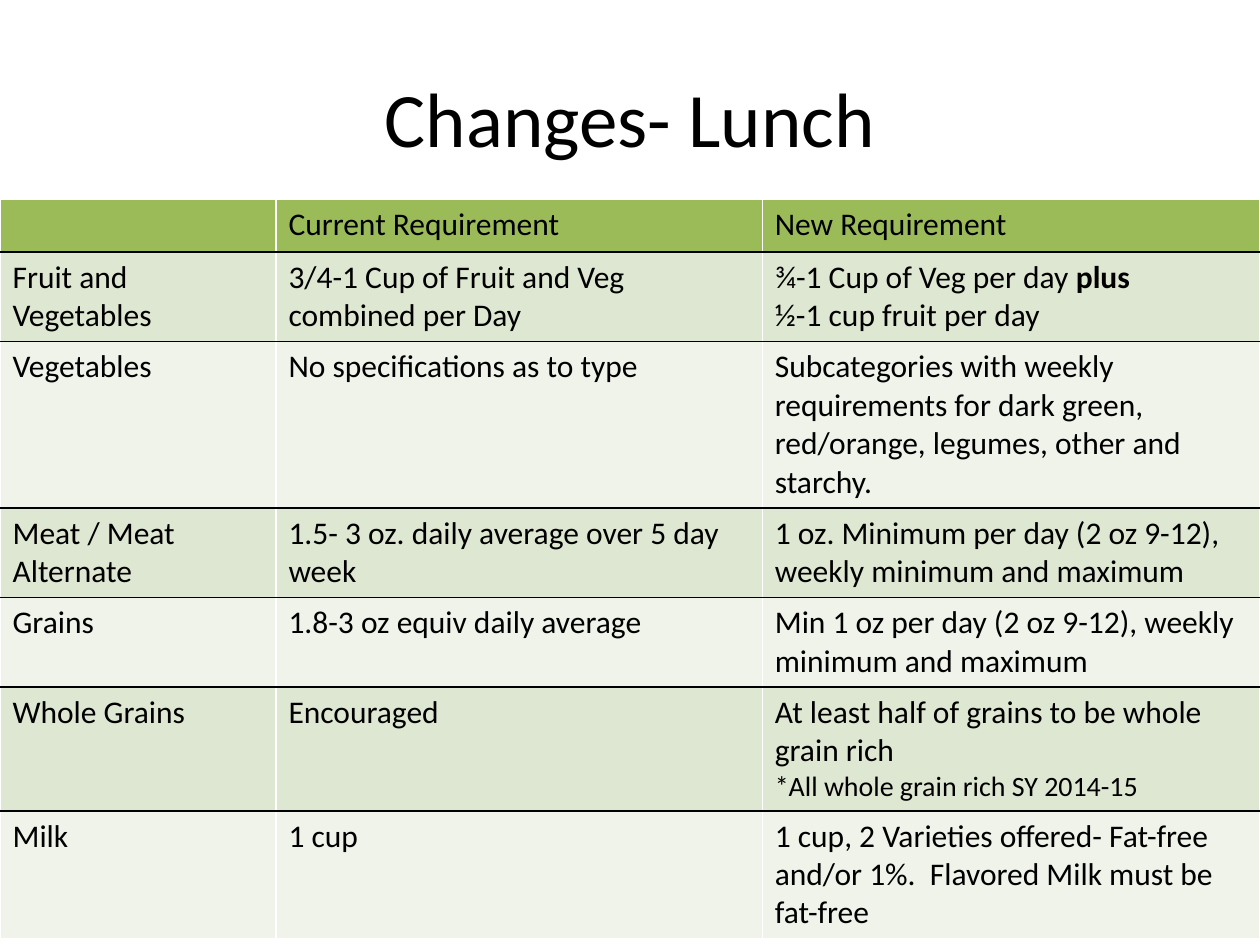
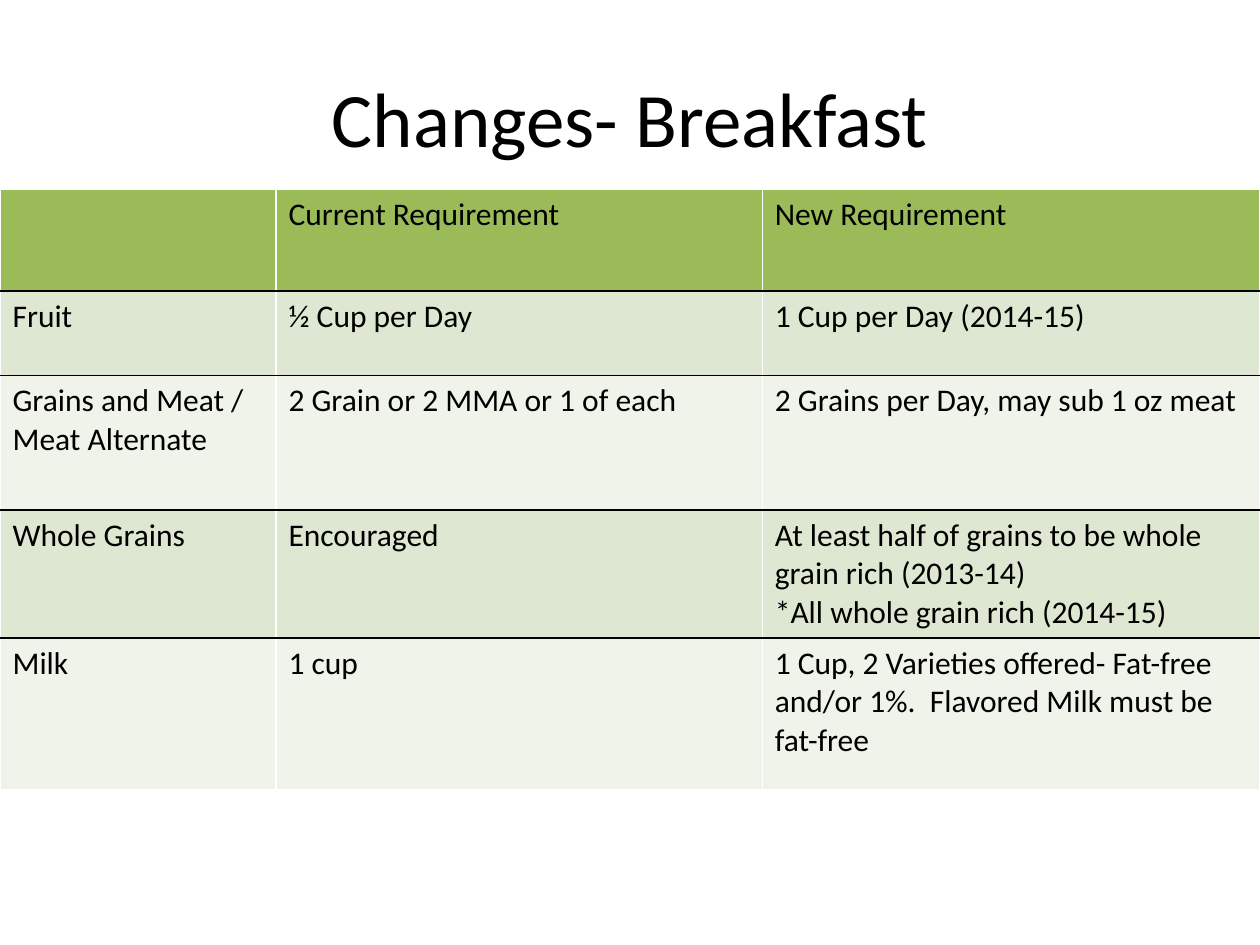
from lxml.etree import SubElement as Sub
from pptx import Presentation
from pptx.dml.color import RGBColor as RGB
from pptx.enum.text import MSO_ANCHOR as Anchor, PP_ALIGN as Align
from pptx.oxml.ns import qn
from pptx.util import Inches, Pt

BLACK = RGB(0x00, 0x00, 0x00)
WHITE = RGB(0xFF, 0xFF, 0xFF)
GREEN = RGB(0x9B, 0xBB, 0x59)
BANDS = (RGB(0xEF, 0xF3, 0xEA), RGB(0xDE, 0xE7, 0xD1))

FACE = "Calibri"
TITLE = (0.5, 0.3, 9, 1.25)
COLS = (2.19, 3.86, 3.95)
HEAD = ("", "Current Requirement", "New Requirement")
BOLD = {"bold": True}
SMALL = {"size": Pt(16)}

LUNCH = (
    HEAD,
    ("Fruit and Vegetables", "3/4-1 Cup of Fruit and Veg combined per Day",
     ([("¾-1 Cup of Veg per day ", {}), ("plus", BOLD)],
      [("½-1 cup fruit per day", {})])),
    ("Vegetables", "No specifications as to type",
     "Subcategories with weekly requirements for dark green, "
     "red/orange, legumes, other and starchy."),
    ("Meat / Meat Alternate", "1.5- 3 oz. daily average over 5 day week",
     "1 oz. Minimum per day (2 oz 9-12), weekly minimum and maximum"),
    ("Grains", "1.8-3 oz equiv daily average",
     "Min 1 oz per day (2 oz 9-12), weekly minimum and maximum"),
    ("Whole Grains", "Encouraged",
     ([("At least half of grains to be whole grain rich", {})],
      [("*All whole grain rich SY 2014-15", SMALL)])),
    ("Milk", "1 cup",
     "1 cup, 2 Varieties offered- Fat-free and/or 1%.  "
     "Flavored Milk must be fat-free"),
)

BREAKFAST = (
    HEAD,
    ("Fruit", "½ Cup per Day", "1 Cup per Day (2014-15)"),
    ("Grains and Meat / Meat Alternate", "2 Grain or 2 MMA or 1 of each",
     "2 Grains per Day, may sub 1 oz meat"),
    ("Whole Grains", "Encouraged",
     ([("At least half of grains to be whole grain rich (2013-14)", {})],
      [("*All whole grain rich (2014-15)", {})])),
    ("Milk", "1 cup",
     "1 Cup, 2 Varieties offered- Fat-free and/or 1%.  "
     "Flavored Milk must be fat-free"),
)

SLIDES = (
    ("Changes- Lunch", 1.58, (0.42, 0.69, 0.99, 0.69, 0.48, 0.95, 0.77), LUNCH),
    ("Changes- Breakfast", 1.5, (0.81, 0.67, 1.07, 0.75, 1.2), BREAKFAST),
)


def style(font, **extra):
    """Give a font the shared face and colour, then its own values."""
    font.color.rgb = BLACK
    values = {"name": FACE, "size": Pt(18), "bold": False, **extra}
    for key, value in values.items():
        setattr(font, key, value)


def add_title(slide, text, box):
    """Place and format the title placeholder in the box."""
    title = slide.shapes.title
    for key, value in zip(("left", "top", "width", "height"), box):
        setattr(title, key, Inches(value))
    frame = title.text_frame
    frame.text = text
    frame.vertical_anchor = Anchor.MIDDLE
    para = frame.paragraphs[0]
    para.alignment = Align.CENTER
    style(para.runs[0].font, size=Pt(44))


def rule_cell(cell, top, base):
    """Draw white sides and the given top and bottom lines on a cell."""
    props = cell._tc.get_or_add_tcPr()
    lines = {"a:lnL": WHITE, "a:lnR": WHITE, "a:lnT": top, "a:lnB": base}
    for tag, color in lines.items():
        line = Sub(props, qn(tag), w=str(Pt(1)))
        fill = Sub(line, qn("a:solidFill"))
        Sub(fill, qn("a:srgbClr"), val=str(color))


def fill_text(frame, text):
    """Write a plain string or paragraphs of formatted runs."""
    paras = ([(text, {})],) if isinstance(text, str) else text
    for num, parts in enumerate(paras):
        para = frame.add_paragraph() if num else frame.paragraphs[0]
        for words, extra in parts:
            if words:
                run = para.add_run()
                run.text = words
                style(run.font, **extra)


def add_grid(slide, rows, box, highs):
    """Build the banded table of requirements in the box."""
    frame = slide.shapes.add_table(len(rows), len(COLS), *map(Inches, box))
    table = frame.table
    table.first_row = table.horz_banding = False
    for col, width in zip(table.columns, COLS):
        col.width = Inches(width)
    for row, high in zip(table.rows, highs):
        row.height = Inches(high)
    last = len(rows) - 1
    for num, row in enumerate(rows):
        for col, text in enumerate(row):
            cell = table.cell(num, col)
            rule_cell(cell, BLACK if num else WHITE, BLACK if num < last else WHITE)
            cell.fill.solid()
            cell.fill.fore_color.rgb = BANDS[num % 2] if num else GREEN
            fill_text(cell.text_frame, text)


def main():
    """Build the slides and save the deck."""
    deck = Presentation()
    deck.slide_width, deck.slide_height = Inches(10), Inches(7.5)
    for title, top, highs, rows in SLIDES:
        slide = deck.slides.add_slide(deck.slide_layouts[5])
        add_title(slide, title, TITLE)
        add_grid(slide, rows, (0, top, sum(COLS), sum(highs)), highs)
    deck.save("out.pptx")


if __name__ == "__main__":
    main()
